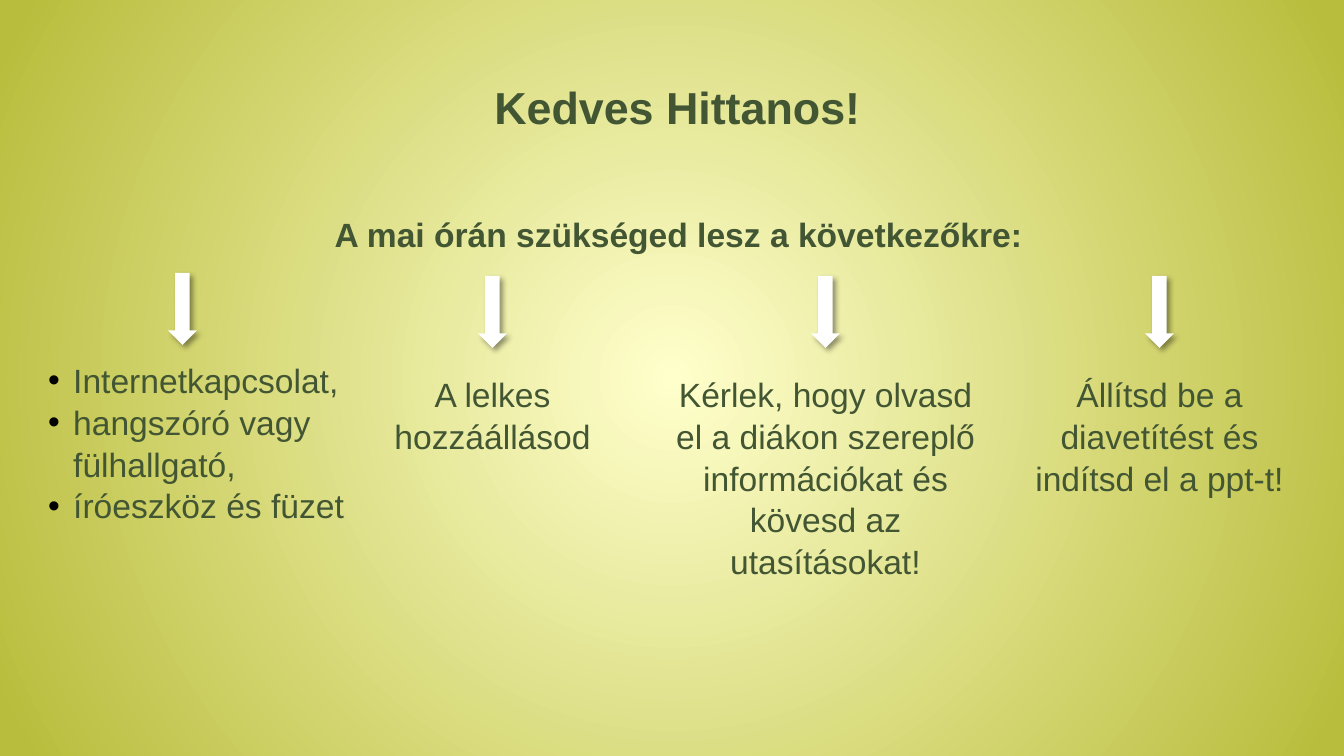
import pptx
import pptx.util
import pptx.dml.color
import pptx.enum.shapes
import pptx.enum.text
import pptx.oxml
import pptx.oxml.ns

NS = pptx.oxml.ns.nsdecls("a")
ALIGN = pptx.enum.text.PP_ALIGN
ANCHOR = pptx.enum.text.MSO_ANCHOR
FIT = pptx.enum.text.MSO_AUTO_SIZE
DOWN = pptx.enum.shapes.MSO_SHAPE.DOWN_ARROW


def px(num):
    return pptx.util.Emu(round(num * 12192000 / 1344))


def color(text):
    return pptx.dml.color.RGBColor.from_string(text)


class Deck:
    font = "Arial"
    ink = "435633"

    def __init__(self, wide, high):
        self.file = pptx.Presentation()
        self.file.slide_width = px(wide)
        self.file.slide_height = px(high)
        self.slide = self.file.slides.add_slide(self.file.slide_layouts[1])

    def glow(self, inner, outer):
        """Fill the background with a gradient that spreads from the centre."""
        fill = self.slide.background.fill
        fill.gradient()
        for stop, place, tone in zip(fill.gradient_stops, (0, 0.97), (inner, outer)):
            stop.position = place
            stop.color.rgb = color(tone)
        line = self.slide.element.xpath(".//p:bg//a:lin")[0]
        line.getparent().replace(line, pptx.oxml.parse_xml(
            f'<a:path {NS} path="circle"><a:fillToRect l="50000" t="50000"'
            ' r="50000" b="50000"/></a:path>'))

    def label(self, shape, box, lines, size=24, bold=False, align=ALIGN.CENTER,
              gap=1.04, pad=0):
        """Place a shape and set its text, one paragraph for each line."""
        shape.left, shape.top, shape.width, shape.height = map(px, box)
        frame = shape.text_frame
        frame.text = "\n".join(lines)
        frame.word_wrap = True
        frame.auto_size = FIT.NONE
        frame.vertical_anchor = ANCHOR.TOP
        frame.margin_left = frame.margin_right = px(pad * 2)
        frame.margin_top = frame.margin_bottom = px(pad)
        for para in frame.paragraphs:
            para.alignment = align
            para.line_spacing = gap
            para.space_before = pptx.util.Pt(0)
            para.font.name = self.font
            para.font.size = pptx.util.Pt(size)
            para.font.bold = bold
            para.font.color.rgb = color(self.ink)
        return frame

    def title(self, box, text):
        self.label(self.slide.shapes.title, box, [text], 32, True)

    def text(self, box, text, **style):
        return self.label(self.slide.shapes.add_textbox(0, 0, 0, 0), box, [text], **style)

    def bullets(self, box, lines):
        frame = self.label(self.slide.placeholders[1], box, lines, align=ALIGN.LEFT)
        for para in frame.paragraphs:
            prop = para._p.get_or_add_pPr()
            prop.set("marL", "228600")
            prop.set("indent", "-228600")
            tail = prop.find(pptx.oxml.ns.qn("a:defRPr"))
            for part in (f'<a:buClr {NS}><a:srgbClr val="000000"/></a:buClr>',
                         f'<a:buFont {NS} typeface="{self.font}"/>',
                         f'<a:buChar {NS} char="•"/>'):
                tail.addprevious(pptx.oxml.parse_xml(part))

    def arrow(self, left, top):
        shape = self.slide.shapes.add_shape(DOWN, px(left), px(top), px(29), px(72))
        shape.fill.solid()
        shape.fill.fore_color.rgb = color("FFFFFF")
        shape.line.fill.background()
        shape.shadow.inherit = False
        shade = shape._element.spPr.find(pptx.oxml.ns.qn("a:effectLst"))
        shade.append(pptx.oxml.parse_xml(
            f'<a:outerShdw {NS} blurRad="50800" dist="38100" dir="2700000"'
            ' algn="tl" rotWithShape="0"><a:srgbClr val="000000">'
            '<a:alpha val="40000"/></a:srgbClr></a:outerShdw>'))


def main():
    deck = Deck(1344, 756)
    deck.glow("FFFFCC", "B9BD3D")
    deck.title((168, 78, 1019, 72), "Kedves Hittanos!")
    lead = deck.text((320, 209, 717, 50), "A mai órán szükséged lesz a következőkre:",
                     bold=True, gap=1, pad=5)
    lead.word_wrap = False
    lead.auto_size = FIT.SHAPE_TO_FIT_TEXT

    deck.bullets((48, 358, 321, 172),
                 ["Internetkapcsolat,", "hangszóró vagy fülhallgató,", "íróeszköz és füzet"])
    deck.arrow(168, 273)

    steps = [
        (356, 273, 126, "A lelkes hozzáállásod"),
        (665, 321, 330, "Kérlek, hogy olvasd el a diákon szereplő információkat "
                        "és kövesd az utasításokat!"),
        (1023, 273, 126, "Állítsd be a diavetítést és indítsd el a ppt-t!"),
    ]
    for left, wide, high, words in steps:
        deck.text((left, 372, wide, high), words)
        deck.arrow(left + (wide - 29) // 2, 276)

    deck.file.save("out.pptx")


if __name__ == "__main__":
    main()
